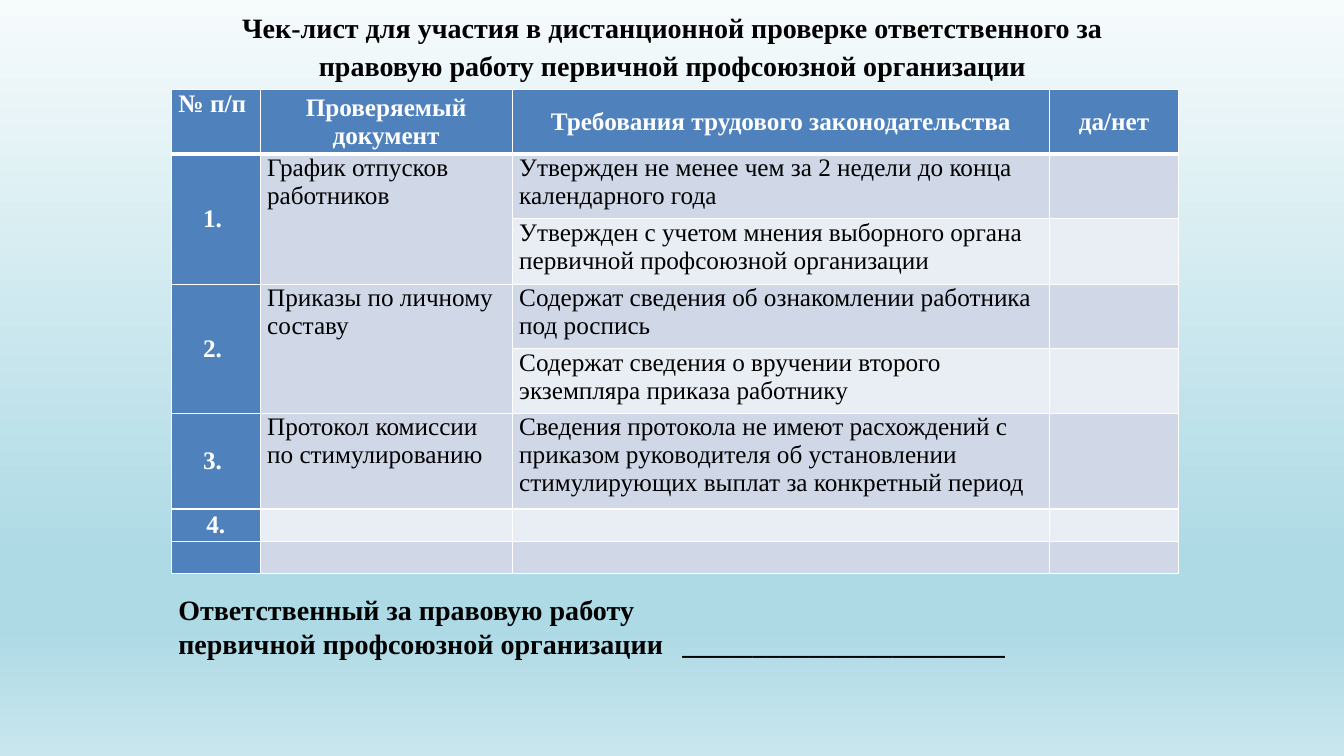
from pptx import Presentation
from pptx.dml.color import RGBColor
from pptx.enum.text import MSO_ANCHOR, MSO_AUTO_SIZE, PP_ALIGN
from pptx.oxml import parse_xml
from pptx.oxml.ns import nsdecls
from pptx.util import Inches, Pt

COLORS = {"text": "000000", "white": "FFFFFF", "head": "4F81BD",
          "band": "D0D8E8", "light": "E9EDF4",
          "sky_top": "F6FBFC", "sky": "AEDAE5", "sky_end": "C9E6EE"}
SKY_STOPS = [(0, "sky_top"), (74, "sky"), (83, "sky"), (100, "sky_end")]

TITLE = ("Чек-лист для участия в дистанционной проверке ответственного за "
         "правовую работу первичной профсоюзной организации")
SIGNATURE = ["Ответственный за правовую работу",
             "первичной профсоюзной организации\t_______________________"]
COLS = [0.88, 2.5, 5.33, 1.28]
HEIGHTS = [0.64, 0.64, 0.65, 0.64, 0.64, 0.95, 0.32, 0.32]
ROWS = [
    ["№ п/п", "Проверяемый документ", "Требования трудового законодательства", "да/нет"],
    ["1. ", "График отпусков работников",
     "Утвержден не менее чем за 2 недели до конца календарного года", ""],
    ["", "", "Утвержден с учетом мнения выборного органа первичной профсоюзной организации", ""],
    ["2. ", "Приказы по личному составу",
     "Содержат сведения об ознакомлении работника под роспись", ""],
    ["", "", "Содержат сведения о вручении второго экземпляра приказа работнику", ""],
    ["3. ", "Протокол комиссии по стимулированию",
     "Сведения протокола не имеют расхождений с приказом руководителя об "
     "установлении стимулирующих выплат за конкретный период", ""],
    ["4.", "", "", ""],
    ["", "", "", ""],
]


class ChecklistSlide:
    font = "Times New Roman"

    def __init__(self, prs):
        self.s = prs.slides.add_slide(prs.slide_layouts[5])

    def background(self, stops):
        gs = "".join(f'<a:gs pos="{pos * 1000}"><a:srgbClr val="{COLORS[name]}"/></a:gs>'
                     for pos, name in stops)
        bg = parse_xml(f'<p:bg {nsdecls("p", "a")}><p:bgPr><a:gradFill rotWithShape="1">'
                       f'<a:gsLst>{gs}</a:gsLst><a:lin ang="5400000" scaled="0"/>'
                       '</a:gradFill><a:effectLst/></p:bgPr></p:bg>')
        self.s.element.cSld.insert(0, bg)

    def run(self, p, text, size, color="text", bold=True):
        r = p.add_run()
        r.text = text
        r.font.name, r.font.size, r.font.bold = self.font, Pt(size), bold
        r.font.color.rgb = RGBColor.from_string(COLORS[color])

    def frame(self, sp):
        tf = sp.text_frame
        tf.word_wrap = True
        tf.auto_size = MSO_AUTO_SIZE.NONE
        tf.vertical_anchor = MSO_ANCHOR.TOP
        return tf

    def title(self, text, x, y, w, h):
        sp = self.s.shapes.title
        sp.left, sp.top, sp.width, sp.height = map(Inches, (x, y, w, h))
        p = self.frame(sp).paragraphs[0]
        p.alignment = PP_ALIGN.CENTER
        p.line_spacing, p.space_after = 1.15, Pt(10)
        self.run(p, text, 20)

    def text(self, lines, x, y, w, h):
        tf = self.frame(self.s.shapes.add_textbox(*map(Inches, (x, y, w, h))))
        for i, line in enumerate(lines):
            p = tf.add_paragraph() if i else tf.paragraphs[0]
            p.alignment = PP_ALIGN.JUSTIFY
            self.run(p, line, 20)

    def borders(self, cell, bottom):
        tcPr = cell._tc.get_or_add_tcPr()
        for i, (side, width) in enumerate(zip("LRTB", (1, 1, 1, bottom))):
            tcPr.insert(i, parse_xml(
                f'<a:ln{side} {nsdecls("a")} w="{Pt(width)}"><a:solidFill>'
                f'<a:srgbClr val="{COLORS["white"]}"/></a:solidFill></a:ln{side}>'))

    def cell(self, cell, text, row, col):
        head = row == 0 or col == 0
        fill = "head" if head else "band" if row % 2 else "light"
        cell.margin_left = cell.margin_right = Inches(0.07)
        cell.margin_top = cell.margin_bottom = 0
        cell.fill.solid()
        cell.fill.fore_color.rgb = RGBColor.from_string(COLORS[fill])
        self.borders(cell, 1 if row else 3)
        if not text:
            return
        p = cell.text_frame.paragraphs[0]
        if row == col == 0:
            p.alignment = PP_ALIGN.JUSTIFY
        elif head:
            p.alignment = PP_ALIGN.CENTER
            cell.vertical_anchor = MSO_ANCHOR.MIDDLE
        self.run(p, text, 18, "white" if head else "text", head)

    def table(self, rows, widths, heights, x, y):
        size = (len(rows), len(widths))
        box = map(Inches, (x, y, sum(widths), sum(heights)))
        table = self.s.shapes.add_table(*size, *box).table
        for column, width in zip(table.columns, widths):
            column.width = Inches(width)
        for row, height in zip(table.rows, heights):
            row.height = Inches(height)
        for i, texts in enumerate(rows):
            for j, text in enumerate(texts):
                self.cell(table.cell(i, j), text, i, j)
        for i in (1, 3):
            for j in (0, 1):
                table.cell(i, j).merge(table.cell(i + 1, j))


def main():
    prs = Presentation()
    prs.slide_width, prs.slide_height = Inches(13.33), Inches(7.5)
    slide = ChecklistSlide(prs)
    slide.background(SKY_STOPS)
    slide.title(TITLE, 1.67, 0, 10, 0.85)
    slide.table(ROWS, COLS, HEIGHTS, 1.7, 0.89)
    slide.text(SIGNATURE, 1.67, 5.83, 9.97, 1.1)
    prs.save("out.pptx")


if __name__ == "__main__":
    main()
